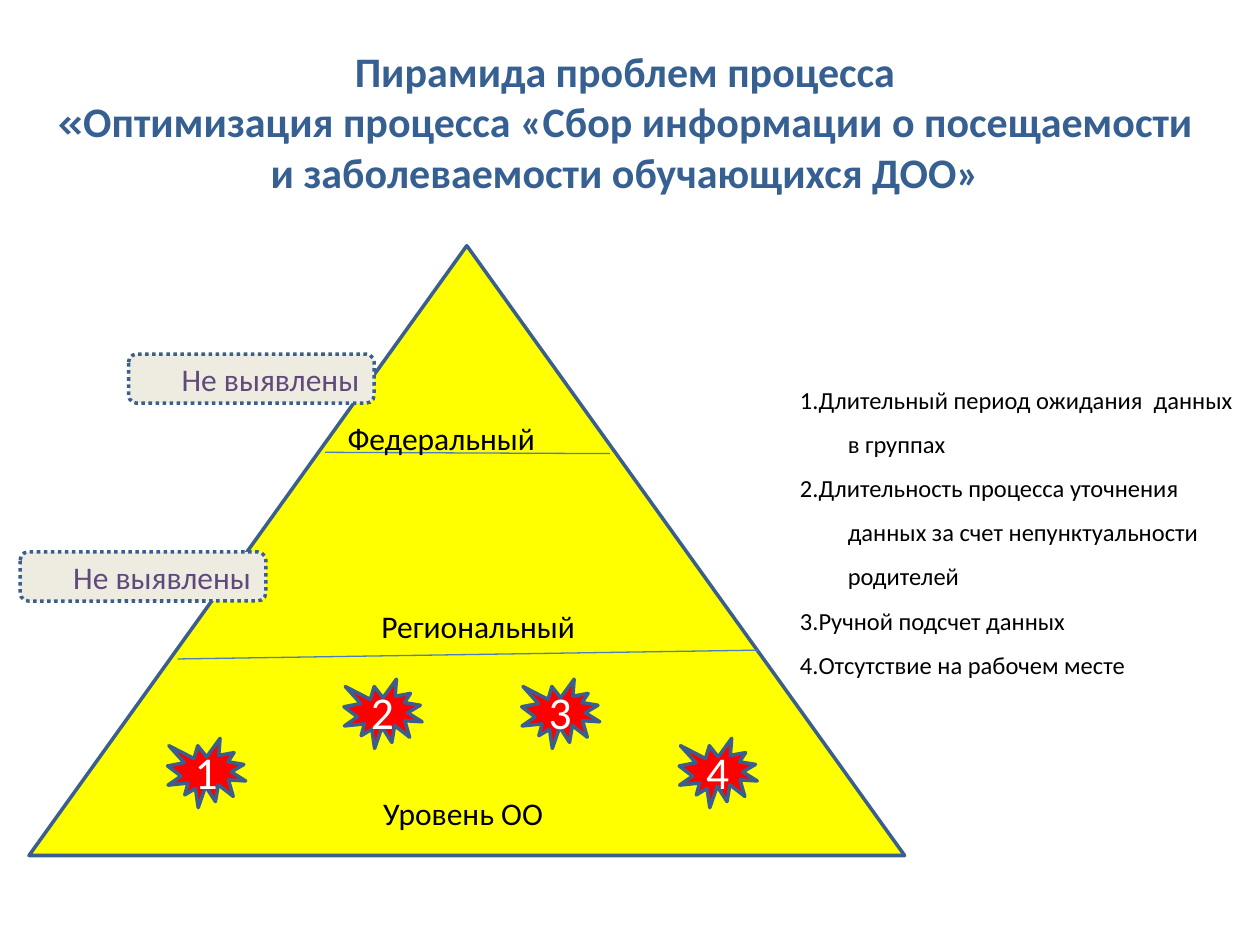
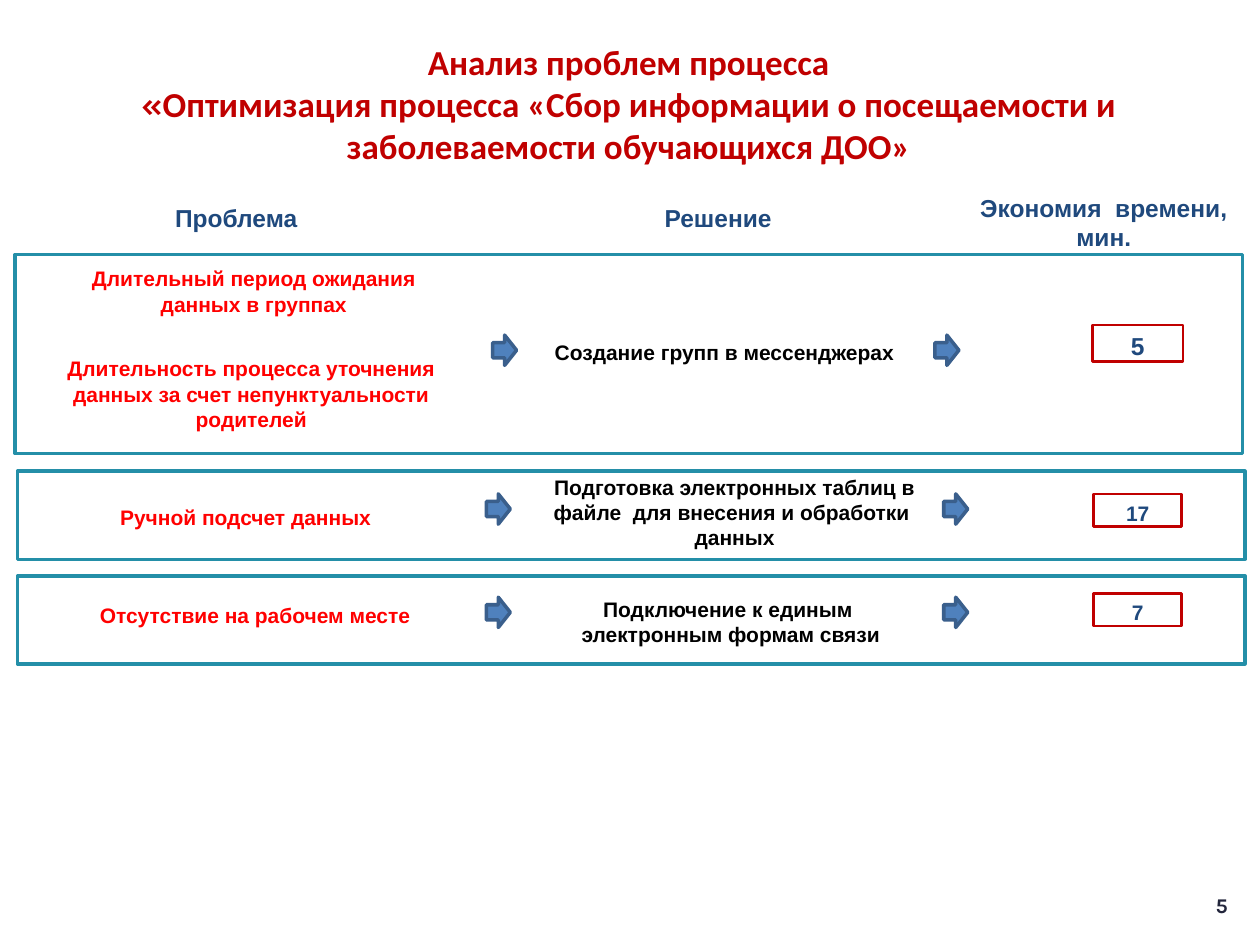
"""Two slides on a process: the pyramid of its problems and their analysis."""
from lxml import etree
from pptx import Presentation, util as u
from pptx.dml.color import RGBColor
from pptx.enum import dml, shapes, text
from pptx.oxml.ns import qn

W, H = 10, 7.5
NAVY, EDGE, RED, CRIMSON, BLACK = "1F497D", "3A5F8C", "FF0000", "C00000", "000000"
SHAPE = shapes.MSO_SHAPE
LEFT, CENTER, RIGHT = text.PP_ALIGN.LEFT, text.PP_ALIGN.CENTER, text.PP_ALIGN.RIGHT
TOP, MIDDLE = text.MSO_ANCHOR.TOP, text.MSO_ANCHOR.MIDDLE
PLAIN, CELL = (0.1, 0.05, 0.1, 0.05), (0.1, 0.09, 0.1, 0.01)
HEADING = (0.1, 0.05, 0.1, 0.01)

PROCESS = "Оптимизация процесса «Сбор информации о посещаемости и заболеваемости обучающихся ДОО»"

PYRAMID = (0.23, 1.95, 6.95, 4.84)
LEVEL_LINES = [(2.58, 3.59, 4.84, 3.6), (1.41, 5.23, 6.02, 5.16)]
LEVELS = [("Федеральный", (2.66, 3.28, 1.88, 0.38), LEFT),
          ("Региональный", (2.27, 4.77, 3.05, 0.38), CENTER),
          ("Уровень ОО", (2.27, 6.25, 2.81, 0.38), CENTER)]
NOT_FOUND = [(1.02, 2.81), (0.16, 4.38)]
SEALS = [(1.33, 5.86), (2.73, 5.39), (4.14, 5.39), (5.39, 5.86)]
PROBLEMS = ["Длительный период ожидания  данных в группах",
            "Длительность процесса уточнения данных за счет непунктуальности родителей",
            "Ручной подсчет данных",
            "Отсутствие на рабочем месте"]

HEADINGS = [("Проблема", (0.96, 1.56, 1.83, 0.3)),
            ("Решение", (4.83, 1.56, 1.74, 0.3)),
            ("Экономия  времени, мин.", (7.52, 1.48, 2.48, 0.53))]
ROWS = [
    dict(frame=(0.12, 2.02, 1.58), arrows=(3.91, 7.42), arrow_top=2.66,
         problems=[("Длительный период ожидания данных в группах", (0.31, 2.03, 3.41, 0.48)),
                   (PROBLEMS[1], (0.23, 2.73, 3.53, 0.71))],
         solution=("Создание групп в мессенджерах", (4.14, 2.6, 3.22, 0.31)),
         saving=("5", (8.67, 2.58, 0.72, 0.29), 14)),
    dict(frame=(0.14, 3.74, 0.7), arrows=(3.86, 7.49), arrow_top=3.92,
         problems=[(PROBLEMS[2], (0.23, 3.91, 3.44, 0.31))],
         solution=("Подготовка электронных таблиц в файле  для внесения и обработки  данных",
                   (4.22, 3.67, 3.22, 0.71)),
         saving=("17", (8.68, 3.92, 0.7, 0.26), 12)),
    dict(frame=(0.14, 4.57, 0.7), arrows=(3.86, 7.49), arrow_top=4.74,
         problems=[(PROBLEMS[3], (0.23, 4.69, 3.59, 0.31))],
         solution=("Подключение к единым  электронным формам связи", (4.19, 4.64, 3.22, 0.51)),
         saving=("7", (8.68, 4.71, 0.7, 0.26), 12)),
]


def rgb(value):
    return RGBColor.from_string(value)


def inches(values):
    return [u.Inches(v) for v in values]


def write(sp, paragraphs, size, color, font="Calibri", bold=False, align=CENTER,
          anchor=MIDDLE, inset=PLAIN, spacing=None, hang=0):
    """Fill a shape with paragraphs, each a string or a list of (text, font) runs."""
    tf = sp.text_frame
    tf.word_wrap, tf.vertical_anchor = True, anchor
    tf.margin_left, tf.margin_top, tf.margin_right, tf.margin_bottom = inches(inset)
    for i, runs in enumerate(paragraphs):
        p = tf.add_paragraph() if i else tf.paragraphs[0]
        p.alignment = align
        if spacing:
            p.line_spacing = spacing
        if hang:
            props = p._p.get_or_add_pPr()
            props.set("marL", str(u.Inches(hang)))
            props.set("indent", str(-u.Inches(hang)))
        for words, face in [(runs, font)] if isinstance(runs, str) else runs:
            r = p.add_run()
            r.text = words
            r.font.name, r.font.size, r.font.bold = face, u.Pt(size), bold
            r.font.color.rgb = rgb(color)


def label(s, box, paragraphs, size, color, **style):
    write(s.shapes.add_textbox(*inches(box)), paragraphs, size, color, **style)


def figure(s, kind, box, fill=None, line=EDGE, width=2):
    sp = s.shapes.add_shape(kind, *inches(box))
    sp.shadow.inherit = False
    if fill:
        sp.fill.solid()
        sp.fill.fore_color.rgb = rgb(fill)
    else:
        sp.fill.background()
    sp.line.color.rgb, sp.line.width = rgb(line), u.Pt(width)
    return sp


def rule(s, ends):
    c = s.shapes.add_connector(shapes.MSO_CONNECTOR.STRAIGHT, *inches(ends))
    c.line.color.rgb, c.line.width = rgb("4B7EBC"), u.Pt(0.75)
    etree.SubElement(c._element.spPr, qn("a:effectLst"))


def title(s, box, first_line, size, color, anchor):
    label(s, box, [first_line, [("«", "Karla"), (PROCESS, "Calibri")]],
          size, color, bold=True, anchor=anchor)


def pyramid_slide(s):
    figure(s, SHAPE.ISOSCELES_TRIANGLE, PYRAMID, "FFFF00")
    for ends in LEVEL_LINES:
        rule(s, ends)
    for name, box, align in LEVELS:
        label(s, box, [name], 18, BLACK, align=align, anchor=TOP)
    for number, place in enumerate(SEALS, 1):
        seal = figure(s, SHAPE.EXPLOSION1, (*place, 0.62, 0.55), RED)
        write(seal, [str(number)], 26, "FFFFFF", inset=(0, 0, 0, 0))
    title(s, (0.31, 0.31, 9.3, 1.31), "Пирамида проблем процесса", 24, "376092", TOP)
    for place in NOT_FOUND:
        tag = figure(s, SHAPE.ROUNDED_RECTANGLE, (*place, 1.95, 0.39), "EEECE1")
        tag.line.dash_style = dml.MSO_LINE.ROUND_DOT
        write(tag, ["Не выявлены"], 18, "604A7B", align=RIGHT)
    numbered = [f"{i}.{problem}" for i, problem in enumerate(PROBLEMS, 1)]
    label(s, (6.25, 2.89, W - 6.25, 2.82), numbered, 14, BLACK, align=LEFT,
          anchor=TOP, spacing=1.5, hang=0.38)


def analysis_slide(s):
    title(s, (0.24, 0.36, 9.5, 0.93), "Анализ проблем процесса", 20, CRIMSON, MIDDLE)
    for heading, box in HEADINGS:
        label(s, box, [heading], 14, NAVY, font="Arial", bold=True, anchor=TOP, inset=HEADING)
    cell = dict(font="Arial", bold=True, inset=CELL)
    for row in ROWS:
        for problem, box in row["problems"]:
            label(s, box, [problem], 12, RED, **cell)
        solution, box = row["solution"]
        label(s, box, [solution], 12, BLACK, **cell)
        minutes, box, size = row["saving"]
        write(figure(s, SHAPE.RECTANGLE, box, line=CRIMSON, width=1.5),
              [minutes], size, NAVY, spacing=0.8, **cell)
        left, top, height = row["frame"]
        figure(s, SHAPE.RECTANGLE, (left, top, 9.74, height), line="248FA8")
        for x in row["arrows"]:
            figure(s, SHAPE.RIGHT_ARROW, (x, row["arrow_top"], 0.19, 0.24), "4F81BD")
    label(s, (9.45, 7.03, 0.49, 0.31), ["5"], 12, "23263C", font="Karla", bold=True)


def main():
    prs = Presentation()
    prs.slide_width, prs.slide_height = inches((W, H))
    for build in (pyramid_slide, analysis_slide):
        build(prs.slides.add_slide(prs.slide_layouts[6]))
    prs.save("out.pptx")


if __name__ == "__main__":
    main()
